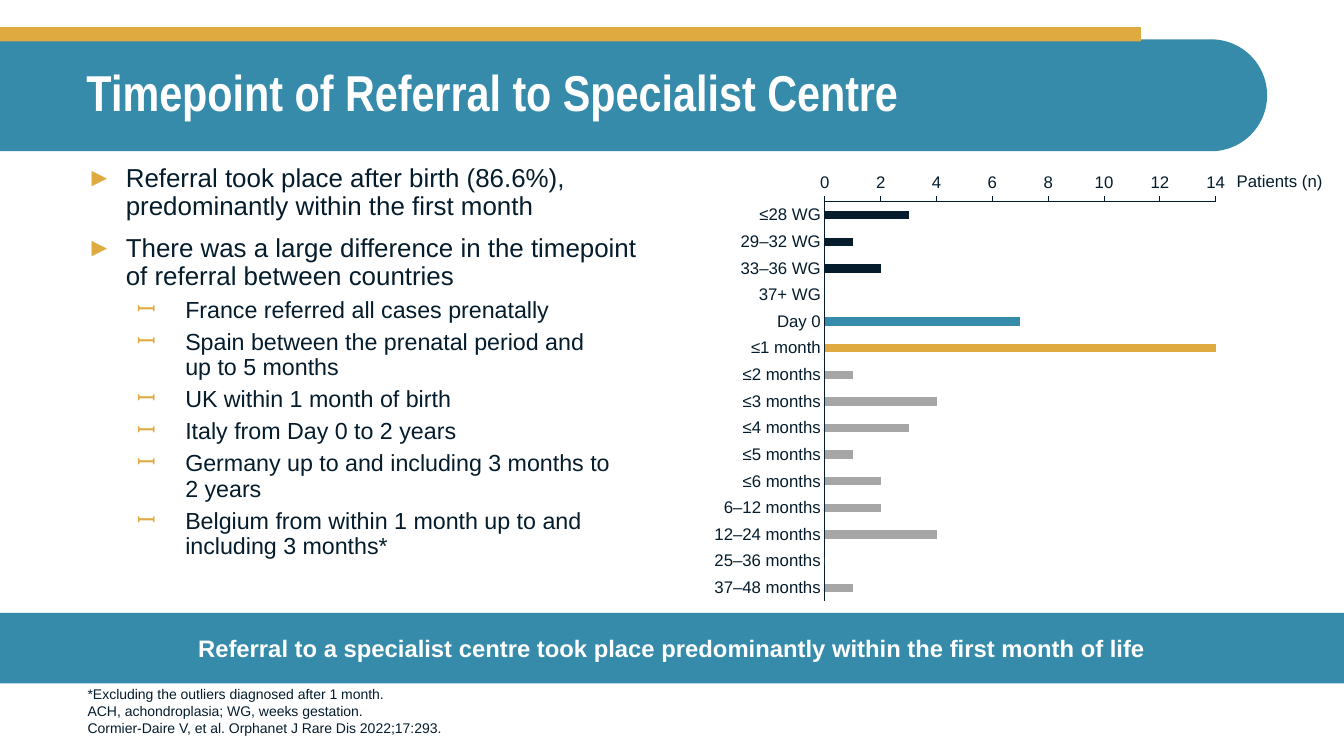
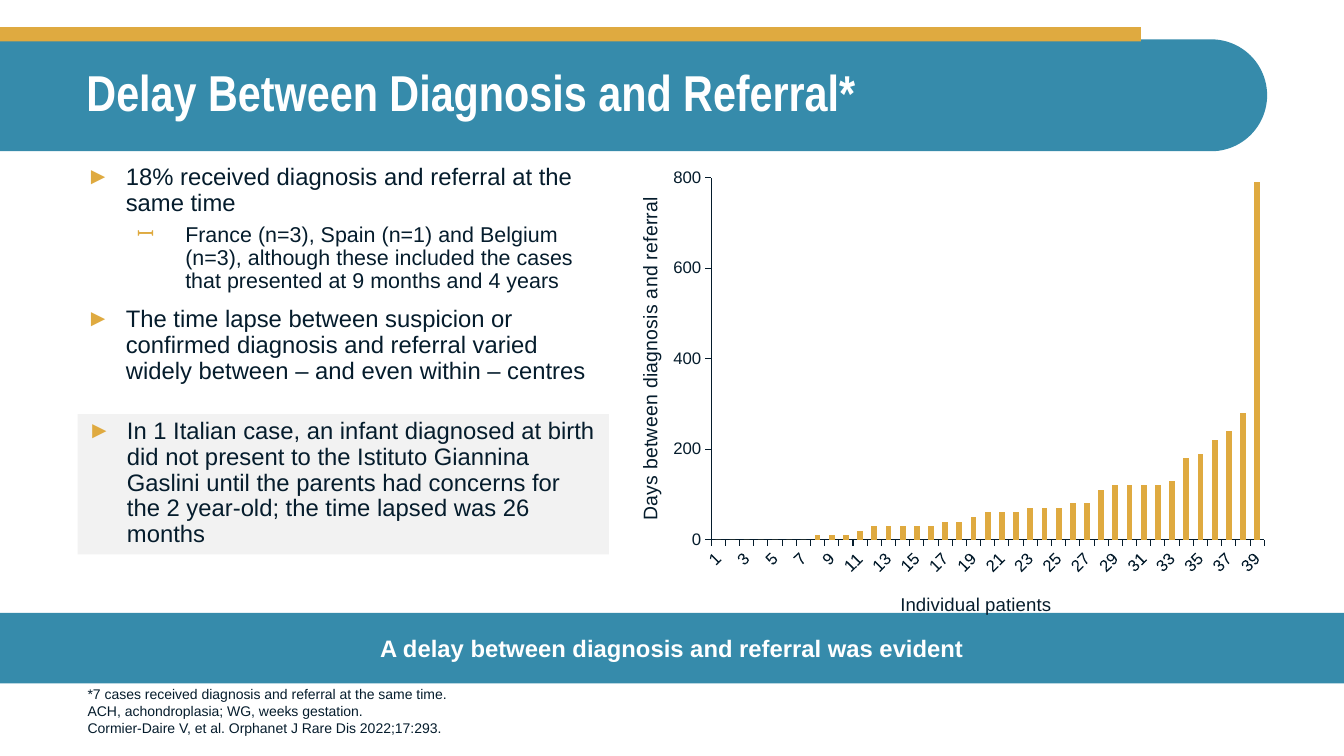
import pptx
import pptx.chart.data
import pptx.dml.color
import pptx.enum.chart
import pptx.enum.shapes
import pptx.enum.text
import pptx.oxml.ns
import pptx.util
from lxml import etree

SLIDE_WIDTH = pptx.util.Inches(13.333)
SLIDE_HEIGHT = pptx.util.Inches(7.5)
TEAL = "368BAB"
GOLD = "DFAA40"
NAVY = "051C2C"
WHITE = "FFFFFF"
GREY = "A6A6A6"
PALE = "F2F2F2"
BODY_FONT = "Arial"
TITLE_FONT = "Arial Narrow"
BULLETS = [("►", 0.39, 0.39, 10), ("ꟷ", 0.98, 0.48, 5)]
SHARED_NOTES = [
    "ACH, achondroplasia; WG, weeks gestation.",
    "Cormier‑Daire V, et al. Orphanet J Rare Dis 2022;17:293.",
]

SHAPES = pptx.enum.shapes.MSO_SHAPE
ANCHOR = pptx.enum.text.MSO_ANCHOR
ALIGN = pptx.enum.text.PP_ALIGN
TICK = pptx.enum.chart.XL_TICK_MARK
qn = pptx.oxml.ns.qn


def rgb(value):
    return pptx.dml.color.RGBColor.from_string(value)


def place(left, top, width, height):
    """Turn percentages of the slide into lengths."""
    return (
        int(SLIDE_WIDTH * left / 100),
        int(SLIDE_HEIGHT * top / 100),
        int(SLIDE_WIDTH * width / 100),
        int(SLIDE_HEIGHT * height / 100),
    )


def style_font(font, size, color=NAVY, bold=False, name=BODY_FONT):
    font.size = pptx.util.Pt(size)
    font.name = name
    font.bold = bold
    font.color.rgb = rgb(color)


def add_shape(slide, kind, area, fill):
    shape = slide.shapes.add_shape(kind, *area)
    shape.shadow.inherit = False
    shape.fill.solid()
    shape.fill.fore_color.rgb = rgb(fill)
    shape.line.fill.background()
    return shape


def add_box(slide, area, anchor=ANCHOR.TOP, wrap=True):
    box = slide.shapes.add_textbox(*area)
    box.text_frame.word_wrap = wrap
    box.text_frame.vertical_anchor = anchor
    return box


def add_paragraph(frame, text, size, **style):
    first = frame.paragraphs[0]
    para = frame.add_paragraph() if first.runs else first
    for index, line in enumerate(text.split("\n")):
        if index:
            para.add_line_break()
        span = para.add_run()
        span.text = line
        style_font(span.font, size, **style)
    return para


def set_bullet(para, level):
    mark, margin, hanging, _ = BULLETS[level]
    para.level = level
    properties = para._p.get_or_add_pPr()
    properties.set("marL", str(pptx.util.Inches(margin)))
    properties.set("indent", str(-pptx.util.Inches(hanging)))
    color = etree.SubElement(properties, qn("a:buClr"))
    etree.SubElement(color, qn("a:srgbClr"), val=GOLD)
    etree.SubElement(properties, qn("a:buFont"), typeface=BODY_FONT)
    etree.SubElement(properties, qn("a:buChar"), char=mark)


def add_bullets(frame, items, sizes):
    for index, (level, text) in enumerate(items):
        para = add_paragraph(frame, text, sizes[level])
        set_bullet(para, level)
        para.alignment = ALIGN.LEFT
        para.line_spacing = 0.9
        if index:
            para.space_before = pptx.util.Pt(BULLETS[level][3])


def add_title_band(slide):
    left, top, width, height = place(0, 5.2, 94.28, 14.8)
    area = (left + (width - height) // 2, top + (height - width) // 2, height, width)
    band = add_shape(slide, SHAPES.ROUND_2_SAME_RECTANGLE, area, TEAL)
    band.rotation = 270
    band.adjustments[0] = 0
    band.adjustments[1] = 0.5
    add_shape(slide, SHAPES.RECTANGLE, place(0, 3.6, 84.9, 1.87), GOLD)


def add_page(deck, title, message, note):
    slide = deck.slides.add_slide(deck.slide_layouts[6])
    add_title_band(slide)
    heading = add_box(slide, place(5.7, 5.2, 88.58, 14.67), ANCHOR.MIDDLE)
    para = add_paragraph(
        heading.text_frame, title, 36, color=WHITE, bold=True, name=TITLE_FONT
    )
    para.line_spacing = 0.9
    notes = add_box(slide, place(5.78, 90.53, 74.1, 7.47), ANCHOR.BOTTOM)
    for line in [note] + SHARED_NOTES:
        add_paragraph(notes.text_frame, line, 10)
    banner = add_shape(slide, SHAPES.RECTANGLE, place(0, 81.07, 100, 9.33), TEAL)
    banner.text_frame.word_wrap = True
    banner.text_frame.vertical_anchor = ANCHOR.MIDDLE
    para = add_paragraph(banner.text_frame, message, 17, color=WHITE, bold=True)
    para.alignment = ALIGN.CENTER
    return slide


def set_layout(parent, **values):
    layout = parent.find(qn("c:layout"))
    if layout is None:
        layout = etree.Element(qn("c:layout"))
        parent.insert(0, layout)
    manual = etree.SubElement(layout, qn("c:manualLayout"))
    if "w" in values:
        etree.SubElement(manual, qn("c:layoutTarget"), val="inner")
    for key in ("x", "y"):
        etree.SubElement(manual, qn(f"c:{key}Mode"), val="edge")
    for key, value in values.items():
        etree.SubElement(manual, qn(f"c:{key}"), val=str(value))


def style_axis(axis, tick):
    axis.has_major_gridlines = False
    axis.major_tick_mark = tick
    axis.minor_tick_mark = TICK.NONE
    axis.format.line.color.rgb = rgb(NAVY)
    axis.format.line.width = pptx.util.Pt(0.75)
    style_font(axis.tick_labels.font, 12)


def add_axis_title(axis, text, size, x, y, rotation=0):
    frame = axis.axis_title.text_frame
    add_paragraph(frame, text, size)
    body = frame._txBody.find(qn("a:bodyPr"))
    body.set("rot", str(rotation * 60000))
    body.set("vert", "horz")
    set_layout(axis.axis_title._element, x=x, y=y)


def add_bar_chart(slide, kind, area, categories, values, color, gap, inner, top, step, tick):
    data = pptx.chart.data.CategoryChartData()
    data.categories = categories
    data.add_series("Series 1", values)
    chart = slide.shapes.add_chart(kind, *area, data).chart
    chart.has_title = False
    chart.has_legend = False
    style_font(chart.font, 10)
    plot = chart.plots[0]
    plot.vary_by_categories = False
    plot.gap_width = gap
    fill = plot.series[0].format.fill
    fill.solid()
    fill.fore_color.rgb = rgb(color)
    style_axis(chart.category_axis, tick)
    style_axis(chart.value_axis, TICK.OUTSIDE)
    chart.value_axis.minimum_scale = 0
    chart.value_axis.maximum_scale = top
    chart.value_axis.major_unit = step
    set_layout(chart._chartSpace.chart.plotArea, **dict(zip("xywh", inner)))
    return chart


def slant_labels(axis, degrees, skip):
    body = axis._element.find(qn("c:txPr")).find(qn("a:bodyPr"))
    body.set("rot", str(degrees * 60000))
    body.set("vert", "horz")
    label_skip = etree.Element(qn("c:tickLblSkip"), val=str(skip))
    axis._element.find(qn("c:noMultiLvlLbl")).addprevious(label_skip)


def build_timepoint(deck):
    slide = add_page(
        deck,
        "Timepoint of Referral to Specialist Centre",
        "Referral to a specialist centre took place predominantly within the first month of life",
        "*Excluding the outliers diagnosed after 1 month.",
    )
    body = add_box(slide, place(5.7, 21.2, 44.33, 57.07))
    items = [
        (0, "Referral took place after birth (86.6%), predominantly within the first month"),
        (0, "There was a large difference in the timepoint of referral between countries"),
        (1, "France referred all cases prenatally"),
        (1, "Spain between the prenatal period and\nup to 5 months"),
        (1, "UK within 1 month of birth"),
        (1, "Italy from Day 0 to 2 years"),
        (1, "Germany up to and including 3 months to\n2 years"),
        (1, "Belgium from within 1 month up to and including 3 months*"),
    ]
    add_bullets(body.text_frame, items, (18.5, 16.6))
    referrals = {
        "≤28 WG": 3, "29–32 WG": 1, "33–36 WG": 2, "37+ WG": 0, "Day 0": 7,
        "≤1 month": 14, "≤2 months": 1, "≤3 months": 4, "≤4 months": 3,
        "≤5 months": 1, "≤6 months": 2, "6–12 months": 2, "12–24 months": 4,
        "25–36 months": 0, "37–48 months": 1,
    }
    chart = add_bar_chart(
        slide, pptx.enum.chart.XL_CHART_TYPE.BAR_CLUSTERED,
        place(50.03, 22.27, 44.33, 59.33), list(referrals), list(referrals.values()),
        NAVY, 219, (0.256, 0.075, 0.656, 0.89), 14, 2, TICK.NONE,
    )
    chart.category_axis.reverse_order = True
    chart.value_axis.tick_label_position = pptx.enum.chart.XL_TICK_LABEL_POSITION.LOW
    after_birth = [TEAL, GOLD] + [GREY] * 9
    for index, color in enumerate(after_birth, start=4):
        fill = chart.plots[0].series[0].points[index].format.fill
        fill.solid()
        fill.fore_color.rgb = rgb(color)
    unit = add_box(slide, place(91.28, 21.87, 7.95, 4), wrap=False)
    add_paragraph(unit.text_frame, "Patients (n)", 12)


def build_delay(deck):
    slide = add_page(
        deck,
        "Delay Between Diagnosis and Referral*",
        "A delay between diagnosis and referral was evident",
        "*7 cases received diagnosis and referral at the same time.",
    )
    body = add_box(slide, place(5.7, 21.2, 38.93, 35.47))
    items = [
        (0, "18% received diagnosis and referral at the same time"),
        (1, "France (n=3), Spain (n=1) and Belgium (n=3), although these included "
            "the cases that presented at 9 months and 4 years"),
        (0, "The time lapse between suspicion or confirmed diagnosis and referral "
            "varied widely between – and even within – centres"),
    ]
    add_bullets(body.text_frame, items, (17, 15.3))
    days = [0] * 7 + [10] * 3 + [20] + [30] * 5 + [40] * 2 + [50] + [60] * 3 + [70] * 3
    days += [80] * 2 + [110] + [120] * 4 + [130, 180, 190, 220, 240, 280, 790]
    patients = [str(number) for number in range(1, len(days) + 1)]
    chart = add_bar_chart(
        slide, pptx.enum.chart.XL_CHART_TYPE.COLUMN_CLUSTERED,
        place(44.63, 21.2, 50.25, 60.93), patients, days,
        GOLD, 145, (0.165, 0.038, 0.819, 0.794), 800, 200, TICK.OUTSIDE,
    )
    chart.plots[0].overlap = -27
    slant_labels(chart.category_axis, -45, 2)
    add_axis_title(chart.category_axis, "Individual patients", 13.3, 0.44, 0.94)
    add_axis_title(
        chart.value_axis, "Days between diagnosis and referral", 14, 0.05, 0.08, -90
    )
    callout = add_shape(slide, SHAPES.RECTANGLE, place(5.78, 54.8, 39.53, 18.53), PALE)
    callout.text_frame.word_wrap = True
    callout.text_frame.vertical_anchor = ANCHOR.TOP
    case = (
        "In 1 Italian case, an infant diagnosed at birth did not present to the "
        "Istituto Giannina Gaslini until the parents had concerns for the "
        "2 year-old; the time lapsed was 26 months"
    )
    add_bullets(callout.text_frame, [(0, case)], (17,))


def main():
    deck = pptx.Presentation()
    deck.slide_width = SLIDE_WIDTH
    deck.slide_height = SLIDE_HEIGHT
    build_timepoint(deck)
    build_delay(deck)
    deck.save("out.pptx")


if __name__ == "__main__":
    main()
